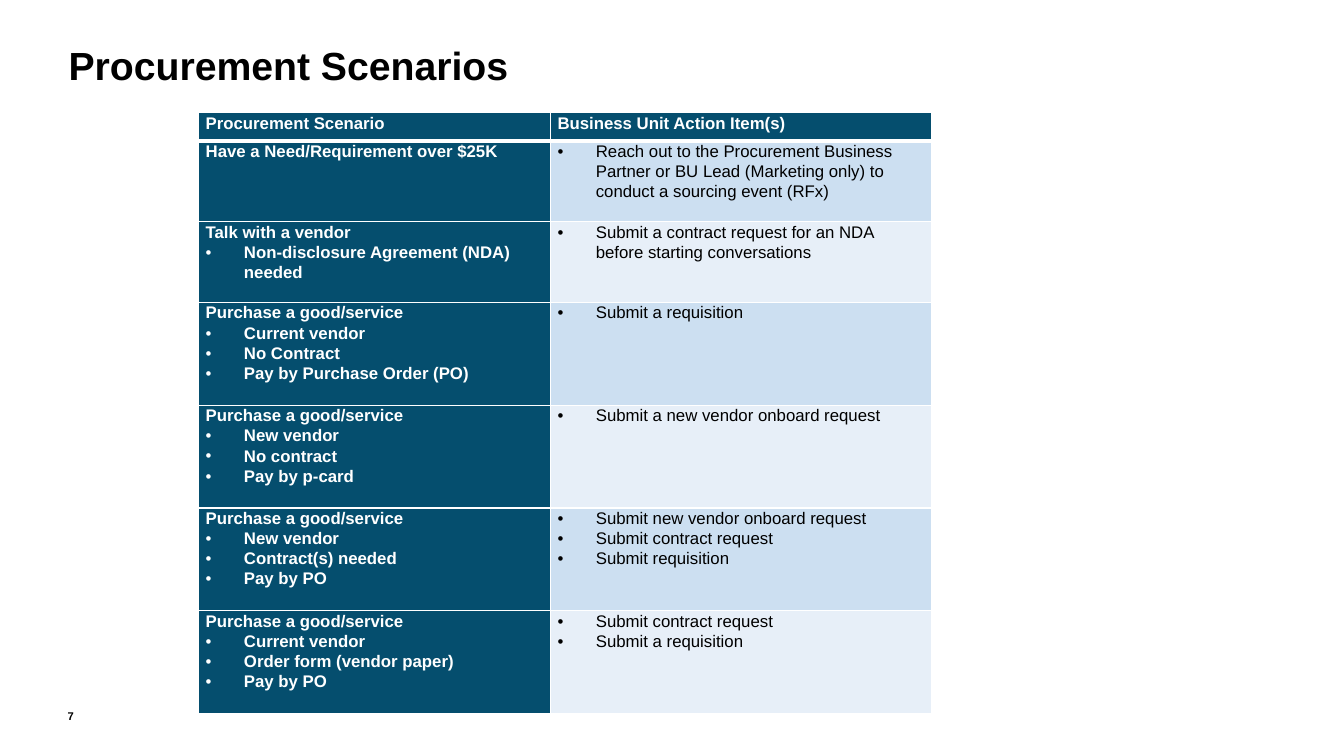
from lxml import etree
from pptx import Presentation
from pptx import util as u
from pptx.dml.color import RGBColor
from pptx.enum import text
from pptx.oxml.ns import qn

COLORS = {
    "black": "000000",
    "white": "FFFFFF",
    "teal": "054E6E",
    "blue": "CCDFF1",
    "pale": "E7EFF8",
}
PURCHASE = "Purchase a good/service"
HEADINGS = ["Procurement Scenario", "Business Unit Action Item(s)"]
# Each row: scenario, its conditions, the actions to take
SCENARIOS = [
    ("Have a Need/Requirement over $25K", [],
     ["Reach out to the Procurement Business Partner or BU Lead "
      "(Marketing only) to conduct a sourcing event (RFx)"]),
    ("Talk with a vendor", ["Non-disclosure Agreement (NDA) needed"],
     ["Submit a contract request for an NDA before starting conversations"]),
    (PURCHASE, ["Current vendor", "No Contract", "Pay by Purchase Order (PO)"],
     ["Submit a requisition"]),
    (PURCHASE, ["New vendor", "No contract", "Pay by p-card"],
     ["Submit a new vendor onboard request"]),
    (PURCHASE, ["New vendor", "Contract(s) needed", "Pay by PO"],
     ["Submit new vendor onboard request", "Submit contract request",
      "Submit requisition"]),
    (PURCHASE, ["Current vendor", "Order form (vendor paper)", "Pay by PO"],
     ["Submit contract request", "Submit a requisition"]),
]
COLUMN_WIDTHS = [3.49, 3.78]
SHORT_ROW, TALL_ROW = 0.8, 1.02
ROW_HEIGHTS = [0.28] + [SHORT_ROW] * 2 + [TALL_ROW] * 4


class Deck:
    font = "Arial"
    body_size = 12
    line_spacing = 1.07
    indent = u.Inches(0.38)
    side_margin = u.Inches(0.07)

    def __init__(self, prs):
        self.slide = prs.slides.add_slide(prs.slide_layouts[6])

    def run(self, p, words, size, color, bold):
        r = p.add_run()
        r.text = words
        r.font.name = self.font
        r.font.size = u.Pt(size)
        r.font.bold = bold
        r.font.color.rgb = RGBColor.from_string(COLORS[color])

    def label(self, box, words, size, margins, anchor, spacing=None):
        """Bold black text box; margins run left, top, right, bottom."""
        sp = self.slide.shapes.add_textbox(*map(u.Inches, box))
        tf = sp.text_frame
        tf.word_wrap = True
        tf.vertical_anchor = anchor
        (tf.margin_left, tf.margin_top,
         tf.margin_right, tf.margin_bottom) = map(u.Inches, margins)
        p = tf.paragraphs[0]
        if spacing:
            p.line_spacing = spacing
        self.run(p, words, size, "black", True)

    def bullet(self, p):
        pPr = p._p.get_or_add_pPr()
        pPr.set("marL", str(self.indent))
        pPr.set("indent", str(-self.indent))
        etree.SubElement(pPr, qn("a:buFont")).set("typeface", self.font)
        etree.SubElement(pPr, qn("a:buChar")).set("char", "•")

    def borders(self, cell, bottom):
        """White lines of 1 pt, with the bottom one as given, below the fill."""
        tcPr = cell._tc.get_or_add_tcPr()
        for i, (side, width) in enumerate(
                [("L", 1), ("R", 1), ("T", 1), ("B", bottom)]):
            ln = etree.Element(qn(f"a:ln{side}"), w=str(u.Pt(width)))
            fill = etree.SubElement(ln, qn("a:solidFill"))
            etree.SubElement(fill, qn("a:srgbClr")).set("val", COLORS["white"])
            tcPr.insert(i, ln)

    def cell(self, cell, lead, bullets, fill, color, bold, bottom=1):
        cell.fill.solid()
        cell.fill.fore_color.rgb = RGBColor.from_string(COLORS[fill])
        self.borders(cell, bottom)
        cell.margin_left = cell.margin_right = self.side_margin
        cell.margin_top = cell.margin_bottom = 0
        tf = cell.text_frame
        lines = ([(lead, False)] if lead else []) + [(b, True) for b in bullets]
        for i, (words, bulleted) in enumerate(lines):
            p = tf.add_paragraph() if i else tf.paragraphs[0]
            p.line_spacing = self.line_spacing
            if bulleted:
                self.bullet(p)
            self.run(p, words, self.body_size, color, bold)

    def table(self, left, top):
        box = (left, top, sum(COLUMN_WIDTHS), sum(ROW_HEIGHTS))
        table = self.slide.shapes.add_table(
            len(ROW_HEIGHTS), len(COLUMN_WIDTHS), *map(u.Inches, box)).table
        for column, width in zip(table.columns, COLUMN_WIDTHS):
            column.width = u.Inches(width)
        for row, height in zip(table.rows, ROW_HEIGHTS):
            row.height = u.Inches(height)
        for i, heading in enumerate(HEADINGS):
            self.cell(table.cell(0, i), heading, [], "teal", "white", True, 3)
        for i, (scenario, conditions, actions) in enumerate(SCENARIOS, 1):
            band = "blue" if i % 2 else "pale"
            self.cell(table.cell(i, 0), scenario, conditions,
                      "teal", "white", True)
            self.cell(table.cell(i, 1), None, actions, band, "black", False)


def main():
    prs = Presentation()
    prs.slide_width, prs.slide_height = u.Inches(13.33), u.Inches(7.5)
    deck = Deck(prs)
    deck.label((0.67, 6.99, 0.3, 0.23), "7", 8, (0, 0.05, 0.1, 0.05),
               text.MSO_ANCHOR.MIDDLE)
    deck.label((0.68, 0.46, 11.98, 0.78), "Procurement Scenarios", 28,
               (0, 0, 0, 0), text.MSO_ANCHOR.TOP, u.Pt(30))
    deck.table(1.97, 1.12)
    prs.save("out.pptx")


if __name__ == "__main__":
    main()
